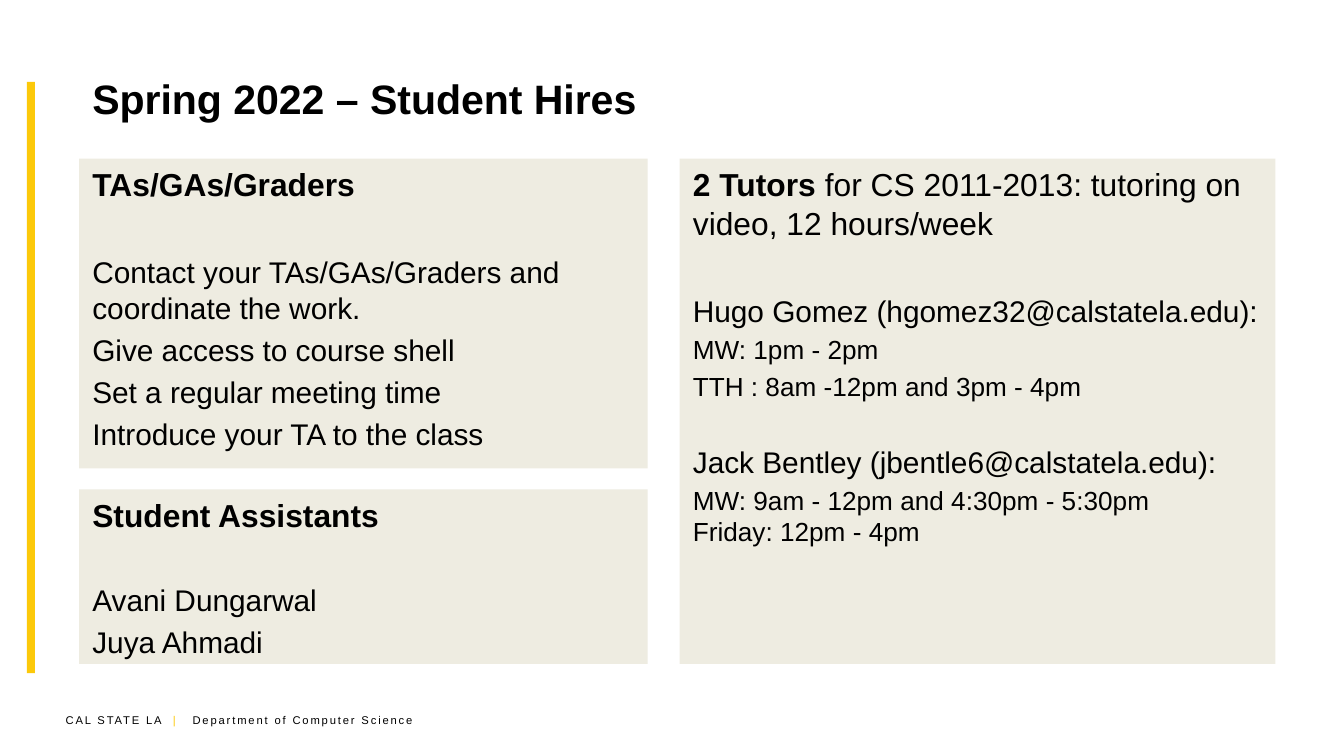
from pptx import Presentation
from pptx.dml.color import RGBColor
from pptx.enum.shapes import MSO_SHAPE as SHAPE
from pptx.enum.text import MSO_ANCHOR as ANCHOR, PP_ALIGN as ALIGN
from pptx.oxml import parse_xml
from pptx.oxml.ns import nsdecls
from pptx.util import Pt

BLACK = RGBColor(0x00, 0x00, 0x00)
GOLD = RGBColor(0xFC, 0xC9, 0x0A)
BEIGE = RGBColor(0xEE, 0xEC, 0xE1)

LEFT, TOP, BOTTOM = 42.4, 85, 355.7
COL_W = 304.6

prs = Presentation()
prs.slide_width, prs.slide_height = Pt(720), Pt(405)
s = prs.slides.add_slide(prs.slide_layouts[6])


def add_run(p, text, size, bold=False, color=BLACK):
    r = p.add_run()
    r.text = text
    for name, value in dict(name="Arial", size=Pt(size), bold=bold).items():
        setattr(r.font, name, value)
    r.font.color.rgb = color
    return r


def add_rect(x, y, w, h, color):
    sp = s.shapes.add_shape(SHAPE.RECTANGLE, Pt(x), Pt(y), Pt(w), Pt(h))
    sp.shadow.inherit = False
    sp.fill.solid()
    sp.fill.fore_color.rgb = color
    sp.line.fill.background()
    return sp


# Footer, with a tab stop before the department
tf = s.shapes.add_textbox(Pt(28.1), Pt(378.7), Pt(210), Pt(14.4)).text_frame
tf.word_wrap = True
p = tf.paragraphs[0]
p._p.get_or_add_pPr().append(parse_xml(
    f'<a:tabLst {nsdecls("a")}><a:tab pos="{Pt(68)}" algn="l"/></a:tabLst>'))
for text, color in [("CAL STATE LA ", BLACK), (" |\t", GOLD),
                    ("Department of Computer Science", BLACK)]:
    r = add_run(p, text, 6, color=color)
    r.font._element.set("spc", "100")

# Gold bar
add_rect(14.4, 43.9, 4.3, 316.8, GOLD)

# Title
tf = s.shapes.add_textbox(Pt(LEFT), Pt(18.7), Pt(640.8), Pt(67.7)).text_frame
tf.word_wrap = True
tf.vertical_anchor = ANCHOR.MIDDLE
add_run(tf.paragraphs[0], "Spring 2022 – Student Hires", 22, True)

# Panels: position and size, then paragraphs as (space before, size, runs)
panels = [
    ((LEFT, 262.2, COL_W, BOTTOM - 262.2), [
        (0, 17, [("Student Assistants", True)]),
        (25.5, 16, [("Avani Dungarwal", False)]),
        (3.2, 16, [("Juya Ahmadi", False)]),
    ]),
    ((364.1, TOP, 319.2, BOTTOM - TOP), [
        (0, 17, [("2 Tutors ", True),
                 ("for CS 2011-2013: tutoring on video, 12 hours/week", False)]),
        (27.2, 16, [("Hugo Gomez (hgomez32@calstatela.edu):", False)]),
        (2.8, 14, [("MW: 1pm - 2pm", False)]),
        (2.8, 14, [("TTH : 8am -12pm and 3pm - 4pm", False)]),
        (22.5, 16, [("Jack Bentley (jbentle6@calstatela.edu):", False)]),
        (2.8, 14, [("MW: 9am - 12pm and 4:30pm - 5:30pm", False)]),
        (0, 14, [("Friday: 12pm - 4pm", False)]),
    ]),
    ((LEFT, TOP, COL_W, 166), [
        (0, 17, [("TAs/GAs/Graders", True)]),
        (27.2, 16, [("Contact your TAs/GAs/Graders and coordinate the work.", False)]),
        (3.2, 16, [("Give access to course shell", False)]),
        (3.2, 16, [("Set a regular meeting time", False)]),
        (3.2, 16, [("Introduce your TA to the class", False)]),
    ]),
]
for box, paragraphs in panels:
    tf = add_rect(*box, BEIGE).text_frame
    tf.word_wrap = True
    tf.vertical_anchor = ANCHOR.TOP
    for i, (before, size, runs) in enumerate(paragraphs):
        p = tf.add_paragraph() if i else tf.paragraphs[0]
        p.alignment = ALIGN.LEFT
        if before:
            p.space_before = Pt(before)
        for text, bold in runs:
            add_run(p, text, size, bold)

prs.save("out.pptx")
